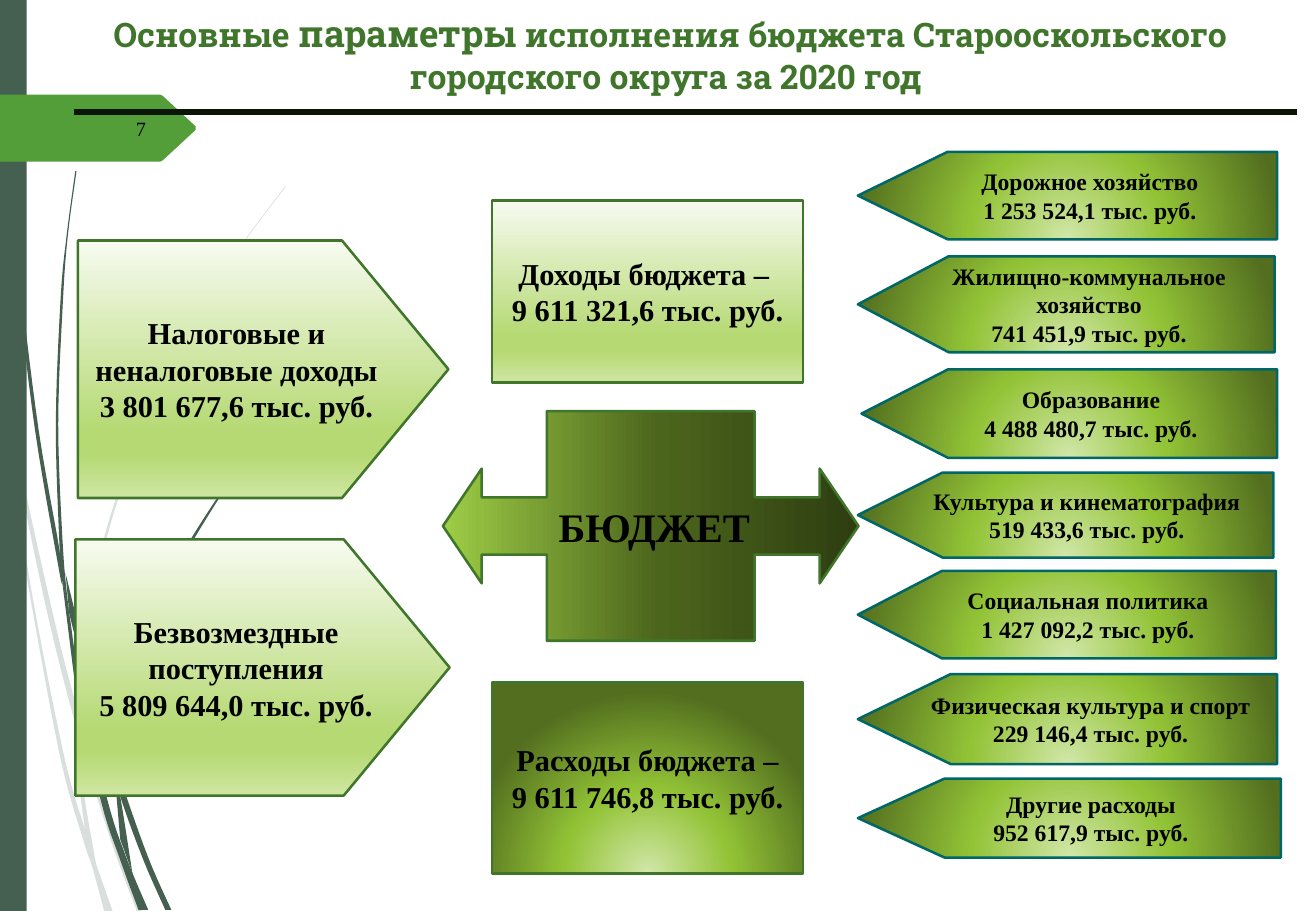
import lxml.etree
import pptx
import pptx.dml.color
import pptx.enum.shapes
import pptx.enum.text
import pptx.oxml
import pptx.oxml.ns
import pptx.util

SHAPE = pptx.enum.shapes.MSO_SHAPE
ALIGN = pptx.enum.text.PP_ALIGN
ANCHOR = pptx.enum.text.MSO_ANCHOR
qn = pptx.oxml.ns.qn

SLATE, LEAF, GREEN, TEAL = "455F51", "549E39", "3F762B", "006666"
PALE = [(0, "F7FBF0"), (74, "B6D974"), (83, "B6D974"), (100, "CFE6A2")]
DARK = [(0, "2E3E11"), (48, "4C651C"), (100, "9ECD46")]
GLOW = [(0, "D2E7A9"), (46, "92C336"), (100, "536E1F")]

LIGHT_WISPS = [
    ([(0, 282), (6, 322), (8, 350)], [(8, 344), (0, 299)]),
    ([(11, 345), (21, 404), (47, 520), (64, 586), (69, 607), (96, 692), (117, 751)],
     [(113, 751), (92, 694), (66, 610), (43, 522), (22, 425), (13, 376)]),
    ([(8, 350), (13, 376), (23, 469), (52, 619), (70, 683), (79, 711), (93, 751)],
     [(86, 751), (76, 714), (69, 693), (49, 621), (21, 470)]),
    ([(63, 599), (66, 610), (68, 646), (79, 711)], [(70, 683), (65, 646)]),
    ([(235, 153), (202, 197), (171, 244), (119, 348), (81, 461), (64, 584), (66, 596)],
     [(66, 584), (83, 462), (120, 349), (172, 245), (202, 198), (235, 154)]),
]
DARK_WISPS = [
    ([(3, 0), (4, 48), (7, 109), (17, 232), (32, 355), (49, 453), (51, 481)],
     [(50, 477), (29, 355), (15, 233), (6, 110), (3, 48), (2, 0)]),
    ([(54, 472), (83, 590), (99, 641), (122, 706), (141, 749)],
     [(136, 749), (118, 708), (99, 656), (79, 592), (57, 505)]),
    ([(51, 477), (57, 505), (65, 556), (88, 657), (104, 706), (122, 749)],
     [(114, 749), (99, 708), (83, 659), (61, 557)]),
    ([(63, 141), (56, 193), (52, 245), (48, 349), (52, 453), (57, 505)],
     [(51, 477), (49, 449), (46, 349), (50, 245), (55, 193), (62, 141)]),
    ([(233, 344), (207, 373), (182, 405), (140, 474), (109, 551), (95, 631), (99, 641)],
     [(99, 633), (112, 552), (142, 476), (183, 406), (207, 374), (234, 344)]),
    ([(95, 645), (99, 656), (109, 719)], [(99, 691)]),
]
TAG = [(0, 78), (132, 78), (134, 79), (161, 104), (161, 107), (134, 132), (132, 133), (0, 133)]

BLOCKS = [
    (SHAPE.RECTANGLE, (405, 165, 256, 150), PALE, [],
     ["Доходы бюджета – ", "9 611 321,6 тыс. руб."]),
    (SHAPE.RECTANGLE, (405, 562, 256, 157), GLOW, [],
     ["Расходы бюджета –", "9 611 746,8 тыс. руб."]),
    (SHAPE.PENTAGON, (64, 198, 305, 212), PALE, [0.413],
     ["Налоговые и неналоговые доходы", "3 801 677,6 тыс. руб."]),
    (SHAPE.PENTAGON, (62, 444, 308, 211), PALE, [0.413],
     ["Безвозмездные поступления", "5 809 644,0 тыс. руб."]),
]
SPENDING = [
    ((706, 125, 345, 72), 1.025, "Дорожное хозяйство", "1 253 524,1"),
    ((706, 211, 343, 79), 0.945, "Жилищно-коммунальное хозяйство", "741 451,9"),
    ((709, 304, 342, 73), 0.977, "Образование", "4 488 480,7"),
    ((706, 389, 342, 70), 0.996, "Культура и кинематография", "519 433,6"),
    ((706, 470, 344, 72), 0.961, "Социальная политика", "1 427 092,2"),
    ((706, 555, 345, 74), 1.03, "Физическая культура и спорт", "229 146,4"),
    ((706, 641, 348, 65), 1.096, "Другие расходы", "952 617,9"),
]


def px(n):
    return pptx.util.Emu(round(n * 9144))


def rgb(color):
    return pptx.dml.color.RGBColor.from_string(color)


def smooth(points, steps=6):
    ends = [points[0], *points, points[-1]]
    curve = []
    for a, b, c, d in zip(ends, ends[1:], ends[2:], ends[3:]):
        for t in (i / steps for i in range(steps)):
            curve.append(tuple(
                b[k] + t / 2 * (c[k] - a[k] + t * (2 * a[k] - 5 * b[k] + 4 * c[k] - d[k]
                                                  + t * (3 * b[k] - a[k] - 3 * c[k] + d[k])))
                for k in (0, 1)))
    return curve + [points[-1]]


def add_run(p, text, size=18, font="Times New Roman", color="000000", bold=True):
    r = p.add_run()
    r.text = text
    r.font.size = pptx.util.Pt(size)
    r.font.name = font
    r.font.bold = bold
    r.font.color.rgb = rgb(color)


class Deck:
    def __init__(self, width, height):
        self.prs = pptx.Presentation()
        self.prs.slide_width, self.prs.slide_height = px(width), px(height)
        self.s = self.prs.slides.add_slide(self.prs.slide_layouts[6])

    def paint(self, sp, color, alpha=None):
        sp.shadow.inherit = False
        sp.fill.solid()
        sp.fill.fore_color.rgb = rgb(color)
        sp.line.fill.background()
        if alpha:
            clr = sp._element.spPr.find(".//" + qn("a:srgbClr"))
            lxml.etree.SubElement(clr, qn("a:alpha"), val=str(alpha * 1000))

    def outline(self, points, color, alpha=None):
        start, *rest = [(px(x), px(y)) for x, y in points]
        fb = self.s.shapes.build_freeform(*start)
        fb.add_line_segments(rest, close=True)
        self.paint(fb.convert_to_shape(), color, alpha)

    def bar(self, box, color):
        self.paint(self.s.shapes.add_shape(SHAPE.RECTANGLE, *map(px, box)), color)

    def gradient(self, sp, stops, angle):
        sp.fill.background()
        grad = lxml.etree.Element(qn("a:gradFill"), rotWithShape="1")
        gs_list = lxml.etree.SubElement(grad, qn("a:gsLst"))
        for pos, color in stops:
            gs = lxml.etree.SubElement(gs_list, qn("a:gs"), pos=str(pos * 1000))
            lxml.etree.SubElement(gs, qn("a:srgbClr"), val=color)
        if stops is GLOW:
            path = lxml.etree.SubElement(grad, qn("a:path"))
            path.set("path", "circle")
            lxml.etree.SubElement(path, qn("a:fillToRect"), l="50000", t="130000",
                                  r="50000", b="-30000")
        else:
            lxml.etree.SubElement(grad, qn("a:lin"), ang=str(angle * 60000), scaled="0")
        spPr = sp._element.spPr
        spPr.replace(spPr.find(qn("a:noFill")), grad)

    def block(self, kind, box, stops, adjustments, lines, size=18, line=GREEN,
              angle=90, rotation=0, wrap=True, **body):
        sp = self.s.shapes.add_shape(kind, *map(px, box))
        sp.shadow.inherit = False
        sp.rotation = rotation
        for i, value in enumerate(adjustments):
            sp.adjustments[i] = value
        self.gradient(sp, stops, angle)
        sp.line.color.rgb = rgb(line)
        sp.line.width = pptx.util.Pt(1.5)
        tf = sp.text_frame
        tf.word_wrap = wrap
        tf.vertical_anchor = ANCHOR.MIDDLE
        for name, value in body.items():
            tf._txBody.bodyPr.set(name, value)
        for i, text in enumerate(lines):
            p = tf.add_paragraph() if i else tf.paragraphs[0]
            p.alignment = ALIGN.CENTER
            add_run(p, text, size=size)

    def text(self, box, runs, align, anchor):
        tf = self.s.shapes.add_textbox(*map(px, box)).text_frame
        tf.word_wrap = True
        tf.vertical_anchor = anchor
        p = tf.paragraphs[0]
        p.alignment = align
        for text, style in runs:
            add_run(p, text, **style)

    def rule(self, x1, y1, x2, y2, color, width):
        c = self.s.shapes.add_connector(pptx.enum.shapes.MSO_CONNECTOR.STRAIGHT,
                                        *map(px, (x1, y1, x2, y2)))
        c.line.color.rgb = rgb(color)
        c.line.width = pptx.util.Pt(width)
        lxml.etree.SubElement(c._element.spPr, qn("a:effectLst"))


def main():
    deck = Deck(1083, 750)
    for wisps, alpha in ((LIGHT_WISPS, 20), (DARK_WISPS, None)):
        for near, far in wisps:
            deck.outline(smooth(near) + smooth(far), SLATE, alpha)
    deck.bar((0, 0, 22, 750), SLATE)
    deck.outline(TAG, LEAF)
    title = dict(size=20, font="Roboto Slab", color=GREEN)
    deck.text((64, 4, 975, 99), [
        ("Основные ", title),
        ("параметры", {**title, "size": 22}),
        (" исполнения бюджета Старооскольского городского округа за 2020 год ", title),
    ], ALIGN.CENTER, ANCHOR.TOP)
    deck.text((61, 86, 69, 40), [("7", dict(size=12, bold=False))], ALIGN.RIGHT, ANCHOR.MIDDLE)
    deck.block(SHAPE.UP_DOWN_ARROW_CALLOUT, (441, 262, 189, 342), DARK,
               [0.25, 0.25, 0.169, 0.5], ["БЮДЖЕТ"], size=24, angle=270,
               rotation=270, wrap=False, vert="eaVert")
    for block in BLOCKS:
        deck.block(*block)
    for box, tip, name, amount in SPENDING:
        deck.block(SHAPE.PENTAGON, box, GLOW, [tip], [name, f"{amount} тыс. руб."],
                   size=14, line=TEAL, rotation=180, rot="10800000")
    deck.rule(61, 92, 1067, 92, "0A1407", 3.75)
    deck.prs.save("out.pptx")


if __name__ == "__main__":
    main()
